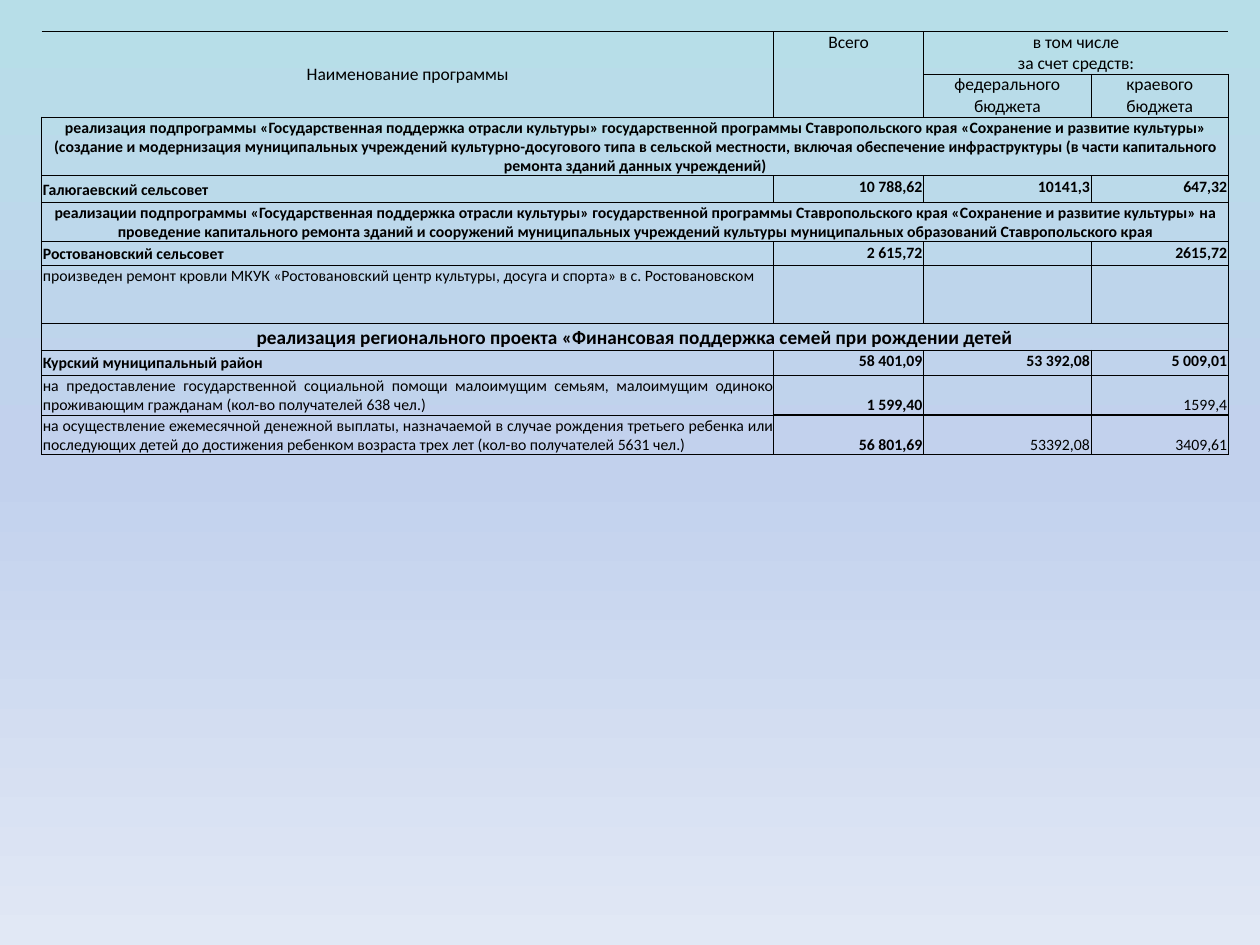
from lxml import etree
from pptx import Presentation
from pptx.dml.color import RGBColor
from pptx.enum.text import MSO_ANCHOR, PP_ALIGN
from pptx.oxml.ns import qn
from pptx.util import Inches, Pt
from copy import deepcopy

TOP, MIDDLE, BOTTOM = MSO_ANCHOR.TOP, MSO_ANCHOR.MIDDLE, MSO_ANCHOR.BOTTOM
LEFT, CENTER, RIGHT, JUSTIFY = (PP_ALIGN.LEFT, PP_ALIGN.CENTER,
                                PP_ALIGN.RIGHT, PP_ALIGN.JUSTIFY)
BLACK = "000000"
GRADIENT = [(0, "B7DEE8"), (0.5, "C2D1ED"), (1, "E1E8F5")]
COLUMN_WIDTHS = [5.81, 1.19, 1.33, 1.09]
HEADER_ROWS = 2
HEADER_HEIGHT = 0.34
HEADER_CELLS = [
    # row, column, last row, last column, text, anchor
    (0, 0, 1, 0, "Наименование программы", MIDDLE),
    (0, 1, 1, 1, "Всего", TOP),
    (0, 2, 0, 3, "в том числе\nза счет средств:", MIDDLE),
    (1, 2, 1, 2, "федерального бюджета", TOP),
    (1, 3, 1, 3, "краевого бюджета", TOP),
]
# Sections span the table; totals are bold; details have regular names
SECTION, TOTAL, DETAIL = "section", "total", "detail"
BODY = [
    (SECTION, 0.46, ["реализация подпрограммы «Государственная поддержка отрасли культуры» "
                     "государственной программы Ставропольского края «Сохранение и развитие "
                     "культуры» (создание и модернизация муниципальных учреждений "
                     "культурно-досугового типа в сельской местности, включая обеспечение "
                     "инфраструктуры (в части капитального ремонта зданий данных учреждений)"],
     dict(anchor=MIDDLE)),
    (TOTAL, 0.21, ["Галюгаевский сельсовет", "10 788,62", "10141,3", "647,32"], {}),
    (SECTION, 0.31, ["реализации подпрограммы «Государственная поддержка отрасли культуры» "
                     "государственной программы Ставропольского края «Сохранение и развитие "
                     "культуры» на проведение капитального ремонта зданий и сооружений "
                     "муниципальных учреждений культуры муниципальных образований "
                     "Ставропольского края"], dict(anchor=MIDDLE)),
    (TOTAL, 0.19, ["Ростовановский сельсовет", "2 615,72", "", "2615,72"], {}),
    (DETAIL, 0.46, ["произведен ремонт кровли МКУК «Ростовановский центр культуры, досуга "
                    "и спорта» в с. Ростовановском", "", "", ""], dict(anchor=TOP)),
    (SECTION, 0.21, ["реализация регионального проекта «Финансовая поддержка семей при "
                     "рождении детей"], dict(anchor=BOTTOM, size=11)),
    (TOTAL, 0.2, ["Курский муниципальный район", "58 401,09", "53 392,08", "5 009,01"],
     dict(align=JUSTIFY)),
    (DETAIL, 0.31, ["на предоставление государственной социальной помощи малоимущим семьям, "
                    "малоимущим одиноко проживающим гражданам (кол-во получателей 638 чел.)",
                    "1 599,40", "", "1599,4"], dict(align=JUSTIFY)),
    (DETAIL, 0.31, ["на осуществление ежемесячной денежной выплаты, назначаемой в случае "
                    "рождения третьего ребенка или последующих детей до достижения ребенком "
                    "возраста трех лет (кол-во получателей 5631 чел.)",
                    "56 801,69", "53392,08", "3409,61"], dict(align=JUSTIFY)),
]
PAYMENT_ROWS = (9, 10)  # rows with heavier lines around the amounts


def color(hex_value):
    return RGBColor.from_string(hex_value)


def write(cell, text, size=9, bold=False, align=LEFT, anchor=MIDDLE, inset=0.01):
    cell.margin_left = cell.margin_right = cell.margin_top = Inches(inset)
    cell.margin_bottom = 0
    cell.vertical_anchor = anchor
    cell.text_frame.text = text
    for paragraph in cell.text_frame.paragraphs:
        paragraph.alignment = align
        for run in paragraph.runs:
            run.font.name = "Calibri"
            run.font.size = Pt(size)
            run.font.bold = bold
            run.font.color.rgb = color(BLACK)
        if not text:  # keeps an empty cell from stretching its row
            etree.SubElement(paragraph._p, qn("a:endParaRPr"), sz=str(size * 100))


def draw_border(cell, side, width):
    line = etree.SubElement(cell._tc.get_or_add_tcPr(), qn("a:ln" + side),
                            w=str(Pt(width)))
    if width:
        fill = etree.SubElement(line, qn("a:solidFill"))
        etree.SubElement(fill, qn("a:srgbClr"), val=BLACK)
    else:
        etree.SubElement(line, qn("a:noFill"))


def border_width(row, column, side):
    last_column = len(COLUMN_WIDTHS) - 1
    if row < HEADER_ROWS and column == 0 and side == "L":
        return 0
    if row == 0 and column >= 2 and side == "R":
        return 0
    if row in PAYMENT_ROWS and column > 0:
        under = side == "B" or (side == "T" and row == PAYMENT_ROWS[1])
        beside_total = (column, side) in ((1, "R"), (2, "L"))
        if under or beside_total or (column, side) == (last_column, "R"):
            return 1
    return 0.5


def add_borders(table, spans):
    owners = {(r, c): span for span in spans
              for r in range(span[0], span[2] + 1) for c in range(span[1], span[3] + 1)}
    steps = {"L": (0, -1), "R": (0, 1), "T": (-1, 0), "B": (1, 0)}
    for row in range(len(table.rows)):
        for column in range(len(table.columns)):
            cell = table.cell(row, column)
            span = owners.get((row, column))
            for side, (down, across) in steps.items():
                neighbour = owners.get((row + down, column + across))
                inside = cell.is_spanned and neighbour == span
                draw_border(cell, side, 0 if inside else border_width(row, column, side))
            cell.fill.background()


def add_budget_table(slide, left, top, width):
    heights = [HEADER_HEIGHT] * HEADER_ROWS + [height for _, height, _, _ in BODY]
    table = slide.shapes.add_table(len(heights), len(COLUMN_WIDTHS), Inches(left), Inches(top),
                                   Inches(width), Inches(sum(heights))).table
    table.first_row = table.horz_banding = False
    for column, share in zip(table.columns, COLUMN_WIDTHS):
        column.width = Inches(share * width / sum(COLUMN_WIDTHS))
    for row, height in zip(table.rows, heights):
        row.height = Inches(height)

    # Header
    spans = []
    for row, column, last_row, last_column, text, anchor in HEADER_CELLS:
        write(table.cell(row, column), text, size=10, align=CENTER, anchor=anchor, inset=0)
        spans.append((row, column, last_row, last_column))

    # Programmes
    for row, (kind, _, texts, style) in enumerate(BODY, HEADER_ROWS):
        name, *amounts = texts
        if kind == SECTION:
            write(table.cell(row, 0), name, bold=True, align=CENTER, **style)
            spans.append((row, 0, row, len(COLUMN_WIDTHS) - 1))
            continue
        write(table.cell(row, 0), name, bold=kind == TOTAL, **style)
        for column, amount in enumerate(amounts, 1):
            write(table.cell(row, column), amount, bold=kind == TOTAL or column == 1,
                  align=RIGHT, anchor=TOP if kind == TOTAL else BOTTOM)

    for row, column, last_row, last_column in spans:
        if (row, column) != (last_row, last_column):
            table.cell(row, column).merge(table.cell(last_row, last_column))
    add_borders(table, spans)


def paint_background(slide):
    fill = slide.background.fill
    fill.gradient()
    fill.gradient_angle = 270
    stop_list = slide.element.find(".//" + qn("a:gsLst"))
    stop_list.append(deepcopy(stop_list[-1]))
    for stop, (position, shade) in zip(fill.gradient_stops, GRADIENT):
        stop.position = position
        stop.color.rgb = color(shade)


def main():
    deck = Presentation()
    deck.slide_width, deck.slide_height = Inches(10), Inches(7.5)
    slide = deck.slides.add_slide(deck.slide_layouts[6])
    paint_background(slide)
    add_budget_table(slide, left=0.33, top=0.25, width=9.42)
    deck.save("out.pptx")


if __name__ == "__main__":
    main()
